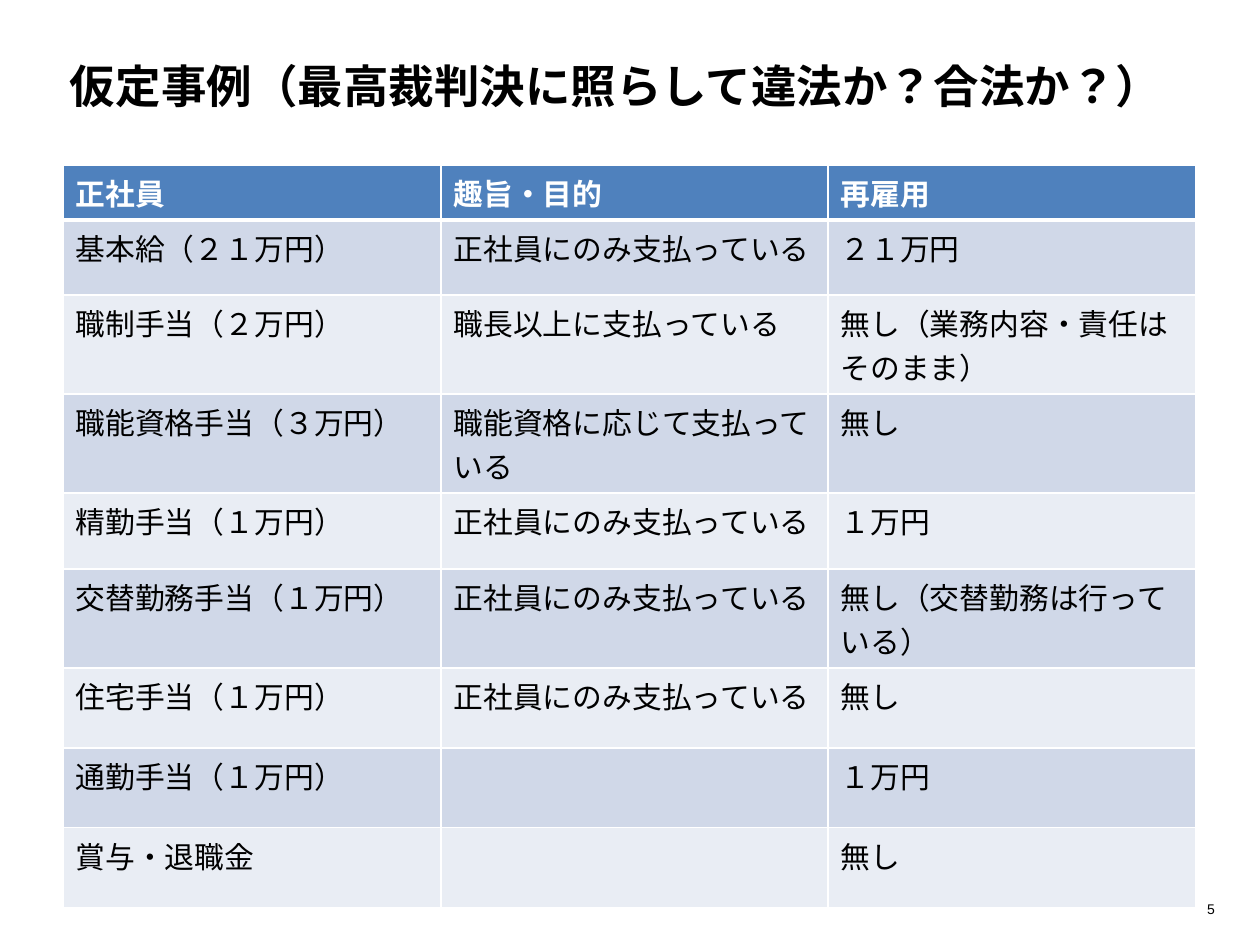
import pptx
import pptx.dml.color
import pptx.enum.lang
import pptx.enum.text
import pptx.oxml
import pptx.oxml.ns
import pptx.util

RGB = pptx.dml.color.RGBColor
ANCHOR = pptx.enum.text.MSO_ANCHOR
ALIGN = pptx.enum.text.PP_ALIGN

WHITE = RGB(0xFF, 0xFF, 0xFF)
BLACK = RGB(0x00, 0x00, 0x00)
BLUE = RGB(0x4F, 0x81, 0xBD)
BANDS = (RGB(0xD0, 0xD8, 0xE8), RGB(0xE9, 0xED, 0xF4))

SANS = "Noto Sans CJK JP"
SCALE = 914400 // 126  # EMU in one px

PAID = "正社員にのみ支払っている"
ROWS = (
    ("正社員", "趣旨・目的", "再雇用"),
    ("基本給（２１万円）", PAID, "２１万円"),
    ("職制手当（２万円）", "職長以上に支払っている", "無し（業務内容・責任はそのまま）"),
    ("職能資格手当（３万円）", "職能資格に応じて支払っている", "無し"),
    ("精勤手当（１万円）", PAID, "１万円"),
    ("交替勤務手当（１万円）", PAID, "無し（交替勤務は行っている）"),
    ("住宅手当（１万円）", PAID, "無し"),
    ("通勤手当（１万円）", "", "１万円"),
    ("賞与・退職金", "", "無し"),
)
WIDTHS = (378, 387, 368)
HEIGHTS = (55, 75, 99, 99, 76, 99, 80, 80, 80)


def px(*nums):
    return [pptx.util.Emu(num * SCALE) for num in nums]


def write(frame, text, size=17, color=BLACK, bold=False, font=SANS,
          align=ALIGN.LEFT):
    para = frame.paragraphs[0]
    para.alignment = align
    run = para.add_run()
    run.text = text
    run.font.size = pptx.util.Pt(size)
    run.font.bold = bold
    run.font.color.rgb = color
    run.font.name = font
    run.font.language_id = pptx.enum.lang.MSO_LANGUAGE_ID.JAPANESE
    # East Asian text takes its own typeface
    asian = pptx.oxml.parse_xml(
        f'<a:ea {pptx.oxml.ns.nsdecls("a")} typeface="{font}"/>')
    run.font._element.append(asian)


def add_text(slide, text, box, anchor, **style):
    frame = slide.shapes.add_textbox(*px(*box)).text_frame
    frame.word_wrap = True
    frame.vertical_anchor = anchor
    frame.margin_left = frame.margin_right = 0
    frame.margin_top = frame.margin_bottom = 0
    write(frame, text, **style)


def add_edge(cell, side, width):
    line = pptx.oxml.parse_xml(
        f'<a:ln{side} {pptx.oxml.ns.nsdecls("a")} w="{pptx.util.Pt(width)}">'
        f'<a:solidFill><a:srgbClr val="{WHITE}"/></a:solidFill></a:ln{side}>')
    cell._tc.get_or_add_tcPr().append(line)


def fill_cell(cell, text, row):
    head = row == 0
    # The rule under the header is thicker
    for side in "LRTB":
        thick = (head and side == "B") or (row == 1 and side == "T")
        add_edge(cell, side, 3 if thick else 1)
    cell.fill.solid()
    cell.fill.fore_color.rgb = BLUE if head else BANDS[(row - 1) % 2]
    if text:
        write(cell.text_frame, text, color=WHITE if head else BLACK, bold=head)


def add_grid(slide, left, top):
    box = px(left, top, sum(WIDTHS), sum(HEIGHTS))
    grid = slide.shapes.add_table(len(ROWS), len(WIDTHS), *box).table
    for col, width in zip(grid.columns, px(*WIDTHS)):
        col.width = width
    for row, height in zip(grid.rows, px(*HEIGHTS)):
        row.height = height
    for row, texts in enumerate(ROWS):
        for col, text in enumerate(texts):
            fill_cell(grid.cell(row, col), text, row)


def main():
    deck = pptx.Presentation()
    deck.slide_width, deck.slide_height = px(1260, 945)
    slide = deck.slides.add_slide(deck.slide_layouts[6])

    # Title
    add_text(slide, "仮定事例（最高裁判決に照らして違法か？合法か？）",
             (70, 59, 1120, 54), ANCHOR.BOTTOM, size=26, bold=True)

    # Pay items compared
    add_grid(slide, 63, 165)

    # Slide number
    add_text(slide, "5", (1178, 895, 37, 28), ANCHOR.MIDDLE,
             size=8, font="Arial", align=ALIGN.RIGHT)

    deck.save("out.pptx")


if __name__ == "__main__":
    main()
